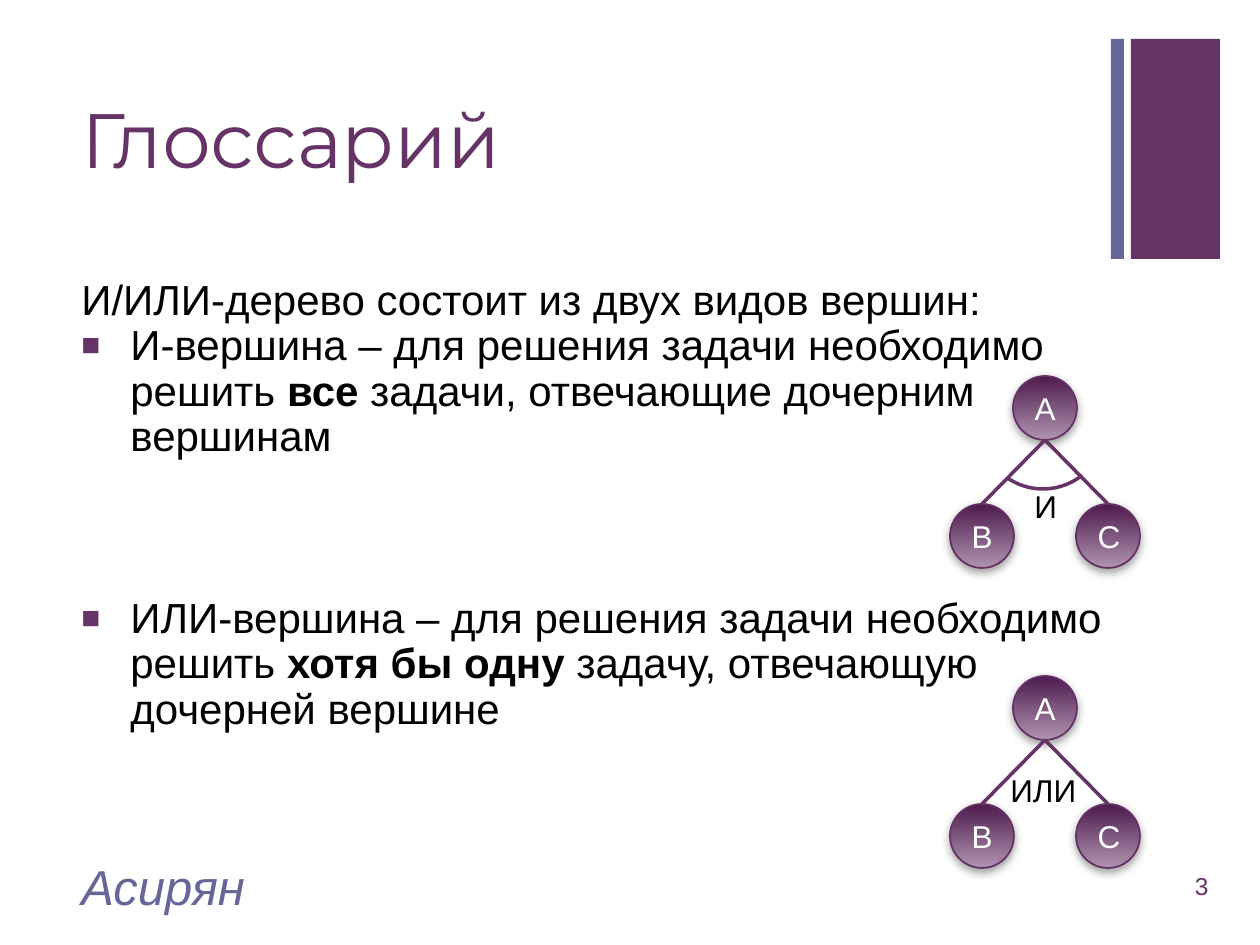
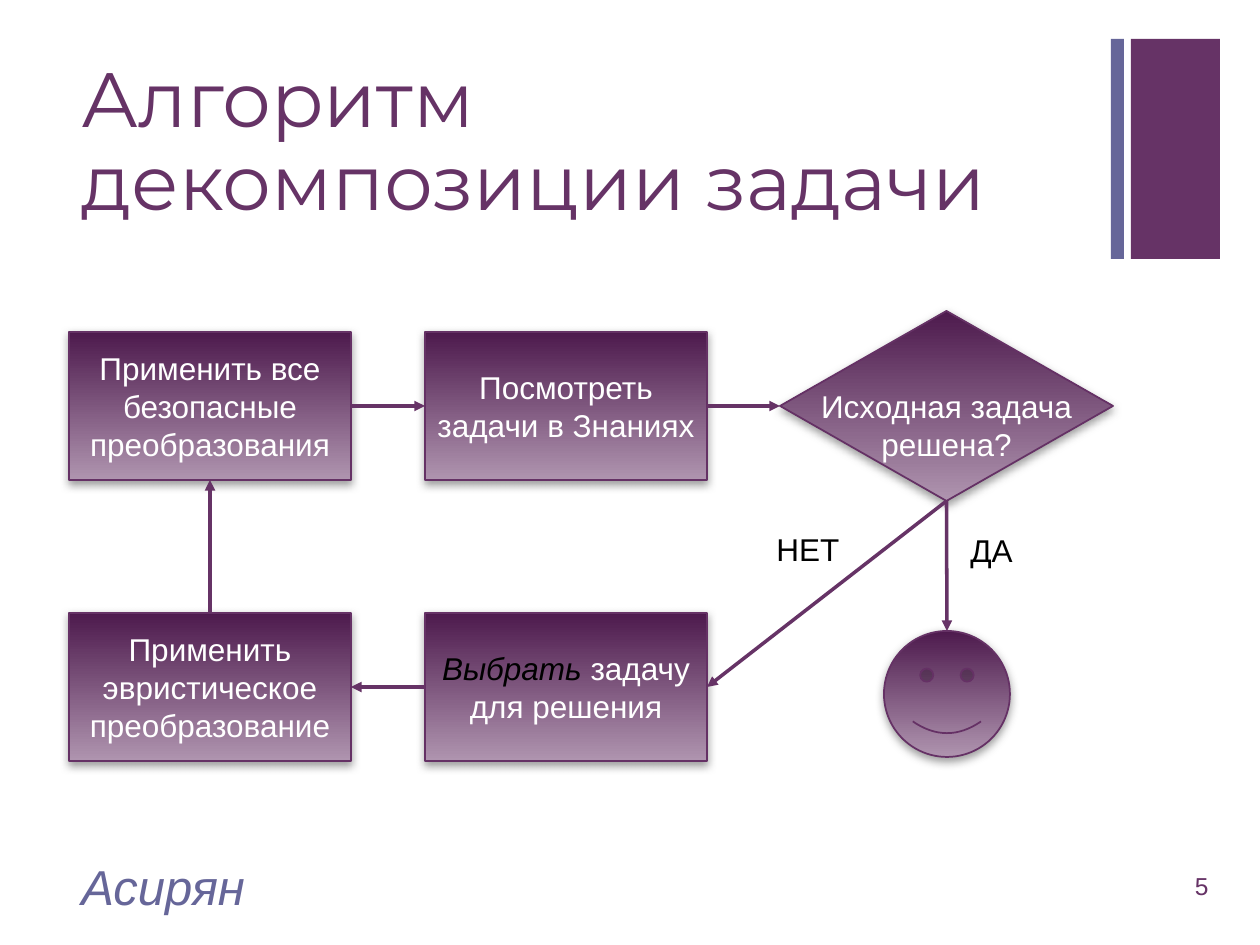
from lxml import etree
from pptx import Presentation, util as u
from pptx.dml.color import RGBColor
from pptx.enum import shapes, text
from pptx.oxml import parse_xml
from pptx.oxml.ns import nsdecls, qn

PX = 914400 / 126
PURPLE, SLATE, EDGE = "663366", "666699", "653165"
GRADIENT = "4D1A4D", "AF94AF"
BLACK, WHITE = "000000", "FFFFFF"
LEFT, MIDDLE = text.PP_ALIGN.LEFT, text.MSO_ANCHOR.MIDDLE
KIND = shapes.MSO_SHAPE
rgb = RGBColor.from_string

SHADOW = f"""<a:effectLst {nsdecls('a')}><a:outerShdw blurRad="63500" dist="25400"
  dir="5400000" rotWithShape="0"><a:srgbClr val="808080"><a:alpha val="75000"/></a:srgbClr>
  </a:outerShdw></a:effectLst>"""


def write(sp, *paragraphs, size=18, font="Arial", color=BLACK, bold=False, italic=False,
          align=LEFT, anchor=text.MSO_ANCHOR.TOP, line=None, wrap=True):
    """Fill a shape with paragraphs; each is a string or a list of (text, format changes)."""
    tf = sp.text_frame
    tf.word_wrap, tf.vertical_anchor = wrap, anchor
    for i, runs in enumerate(paragraphs):
        p = tf.add_paragraph() if i else tf.paragraphs[0]
        p.alignment = align
        if line:
            p.line_spacing = line
        for words, changes in [(runs, {})] if isinstance(runs, str) else runs:
            r = p.add_run()
            r.text = words
            r.font.name, r.font.size = font, u.Pt(size)
            r.font.bold = changes.get("bold", bold)
            r.font.italic = changes.get("italic", italic)
            r.font.color.rgb = rgb(changes.get("color", color))
    return tf


def node(s, kind, box, *paragraphs, **fmt):
    """Add a diagram shape with the purple gradient and a soft shadow."""
    sp = s.shapes.add_shape(kind, *(round(v * PX) for v in box))
    sp.fill.gradient()
    sp.fill.gradient_angle = 270
    for stop, color in zip(sp.fill.gradient_stops, GRADIENT):
        stop.color.rgb = rgb(color)
    sp.line.color.rgb, sp.line.width = rgb(EDGE), u.Pt(1)
    sp._element.spPr.append(parse_xml(SHADOW))
    write(sp, *paragraphs, color=WHITE, align=text.PP_ALIGN.CENTER, anchor=MIDDLE, **fmt)
    return sp


prs = Presentation()
prs.slide_width, prs.slide_height = round(1260 * PX), round(945 * PX)

# Bands, title and footer of every slide
slides = []
for title, number in (("Глоссарий", "3"), ("Алгоритм декомпозиции задачи", "5")):
    s = prs.slides.add_slide(prs.slide_layouts[6])
    slides.append(s)
    for x, w, color in ((1131, 89, PURPLE), (1111, 13, SLATE)):
        sp = s.shapes.add_shape(KIND.RECTANGLE, *(round(v * PX) for v in (x, 39, w, 220)))
        sp.shadow.inherit = False
        sp.fill.solid()
        sp.fill.fore_color.rgb = rgb(color)
        sp.line.fill.background()
    for words, box, fmt in (
        (title, (69, 67, 1041, 154),
         dict(size=44, font="Montserrat", color=PURPLE, line=0.9)),
        ("Асирян", (69, 861, 844, 50), dict(size=28, color=SLATE, italic=True)),
        (number, (1144, 861, 77, 50),
         dict(size=14, color=PURPLE, align=text.PP_ALIGN.RIGHT)),
    ):
        sp = s.shapes.add_textbox(*(round(v * PX) for v in box))
        write(sp, words, anchor=MIDDLE, **fmt)
glossary, algorithm = slides
links = []  # (connector, has arrowhead)
labels = []  # (slide, words, left, top, width)

# Glossary: definitions
sp = glossary.shapes.add_textbox(*(round(v * PX) for v in (69, 273, 1075, 571)))
tf = write(
    sp,
    "И/ИЛИ-дерево состоит из двух видов вершин:",
    [("И-вершина – для решения задачи необходимо решить ", {}), ("все", {"bold": True}),
     (" задачи, отвечающие дочерним вершинам", {})],
    [("ИЛИ-вершина – для решения задачи необходимо решить ", {}),
     ("хотя бы одну ", {"bold": True}), ("задачу, отвечающую дочерней вершине", {})],
    size=24, line=0.9)
tf.paragraphs[2].space_before = u.Pt(78)
for p in tf.paragraphs[1:]:
    pPr = p._p.get_or_add_pPr()
    pPr.set("marL", str(round(49 * PX)))
    pPr.set("indent", str(round(-49 * PX)))
    color = etree.SubElement(pPr, qn("a:buClr"))
    etree.SubElement(color, qn("a:srgbClr"), val=PURPLE)
    etree.SubElement(pPr, qn("a:buSzPct"), val="75000")
    etree.SubElement(pPr, qn("a:buFont"), typeface="Arial")
    etree.SubElement(pPr, qn("a:buChar"), char="■")

# Glossary: the two trees
for top in (376, 676):
    node(glossary, KIND.FLOWCHART_CONNECTOR, (1013, top, 64, 64), "A")
    for x, name in ((950, "B"), (1076, "C")):
        child = node(glossary, KIND.FLOWCHART_CONNECTOR, (x, top + 128, 64, 64), name)
        ends = (1045, top + 64, x + 32, top + 128)
        c = glossary.shapes.add_connector(shapes.MSO_CONNECTOR.STRAIGHT,
                                          *(round(v * PX) for v in ends))
        c.end_connect(child, 0)
        links.append((c, False))
arc = glossary.shapes.add_shape(KIND.ARC, *(round(v * PX) for v in (980, 363, 126, 126)))
arc.rotation = 37.5
arc.adjustments[0], arc.adjustments[1] = 8.45, 51.92
arc.shadow.inherit = False
arc.fill.background()
arc.line.color.rgb, arc.line.width = rgb(PURPLE), u.Pt(2)
labels += [(glossary, "И", 1022, 481, 48), (glossary, "ИЛИ", 998, 765, 92)]

# Algorithm: flow chart
steps = {}
for name, col, row, words in (
    ("safe", 0, 0, "Применить все безопасные преобразования"),
    ("look", 1, 0, "Посмотреть задачи в Знаниях"),
    ("heuristic", 0, 1, "Применить эвристическое преобразование"),
    ("choose", 1, 1, [("Выбрать", {"color": BLACK, "italic": True}),
                      (" задачу для решения", {})]),
):
    box = (69 + 356 * col, 332 + 281 * row, 282, 148)
    steps[name] = node(algorithm, KIND.RECTANGLE, box, words)
steps["solved"] = node(algorithm, KIND.FLOWCHART_DECISION, (780, 311, 333, 190),
                       "Исходная задача", "решена?", wrap=False)
steps["solved"].text_frame.margin_top = round(44 * PX)
steps["done"] = node(algorithm, KIND.SMILEY_FACE, (884, 631, 126, 126))
for start, start_side, end, end_side in (
    ("safe", 3, "look", 1), ("look", 3, "solved", 1), ("solved", 2, "choose", 3),
    ("choose", 1, "heuristic", 3), ("heuristic", 0, "safe", 2), ("solved", 2, "done", 0),
):
    c = algorithm.shapes.add_connector(shapes.MSO_CONNECTOR.STRAIGHT, 0, 0, 0, 0)
    c.begin_connect(steps[start], start_side)
    c.end_connect(steps[end], end_side)
    links.append((c, True))
labels += [(algorithm, "НЕТ", 764, 524, 92), (algorithm, "ДА", 958, 525, 92)]

for c, arrow in links:
    c.line.color.rgb, c.line.width = rgb(PURPLE), u.Pt(2)
    if arrow:
        etree.SubElement(c.line._get_or_add_ln(), qn("a:tailEnd"), type="triangle")
    etree.SubElement(c._element.spPr, qn("a:effectLst"))
for s, words, x, y, w in labels:
    write(s.shapes.add_textbox(*(round(v * PX) for v in (x, y, w, 50))), words)

prs.save("out.pptx")
